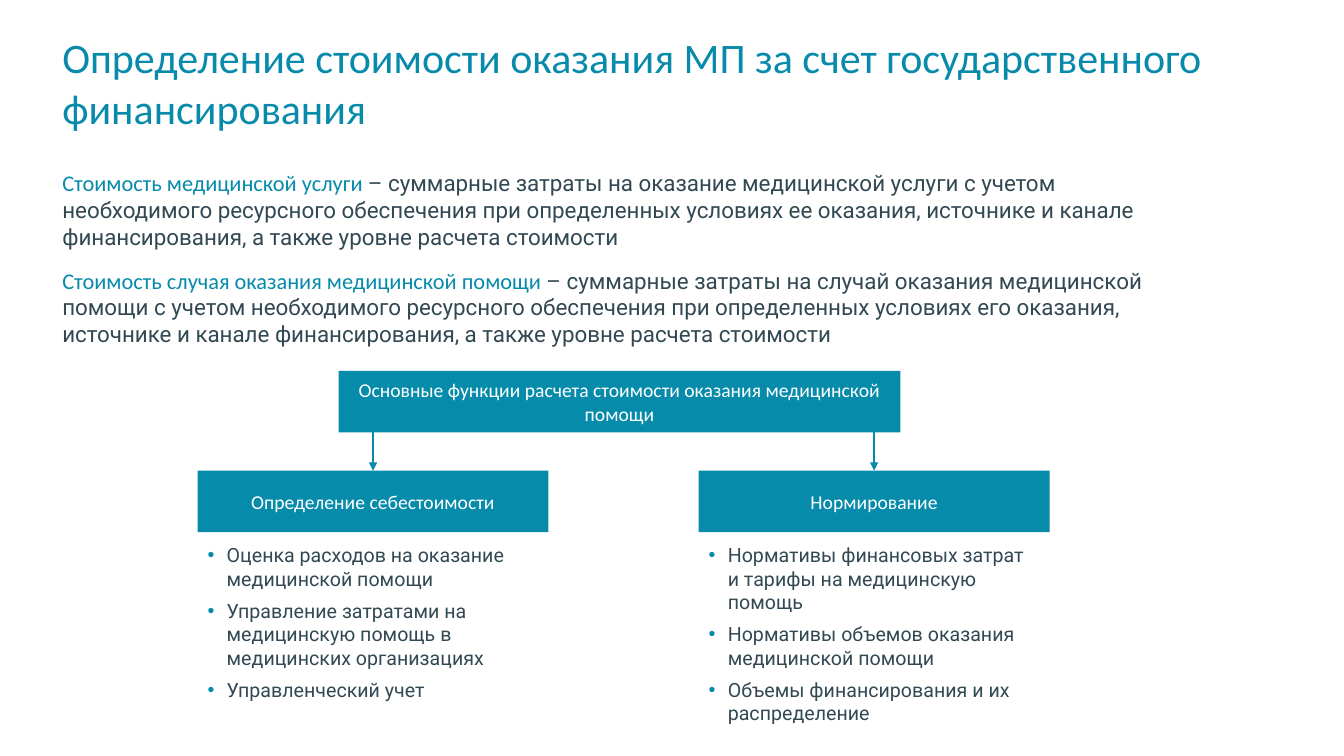
from lxml.etree import SubElement
from pptx import Presentation
from pptx.dml.color import RGBColor
from pptx.enum.shapes import MSO_CONNECTOR, MSO_SHAPE
from pptx.enum.text import MSO_ANCHOR, PP_ALIGN
from pptx.oxml.ns import qn
from pptx.util import Inches, Pt

TEAL, TITLE_TEAL, SLATE, WHITE = "068BAA", "088AAB", "324953", "FFFFFF"
LEFT, WIDTH = 0.52, 11.53
COLUMN_LEFT, COLUMN_STEP, COLUMN_WIDTH = 1.96, 4.97, 3.48
HEADER_TOP, HEADER_HEIGHT, LIST_TOP, LIST_HEIGHT = 4.67, 0.61, 5.34, 1.68
ARROW_LENGTH = 0.54

TITLE = "Определение стоимости оказания МП за счет государственного финансирования"
DEFINITIONS = [
    ("Стоимость медицинской услуги ",
     "– суммарные затраты на оказание медицинской услуги с учетом необходимого "
     "ресурсного обеспечения при определенных условиях ее оказания, источнике и канале "
     "финансирования, а также уровне расчета стоимости"),
    ("Стоимость случая оказания медицинской помощи ",
     "– суммарные затраты на случай оказания медицинской помощи с учетом необходимого "
     "ресурсного обеспечения при определенных условиях его оказания, источнике и канале "
     "финансирования, а также уровне расчета стоимости"),
]
FUNCTIONS_HEADING = "Основные функции расчета стоимости оказания медицинской помощи"
FUNCTIONS = [
    ("Определение себестоимости", [
        "Оценка расходов на оказание медицинской помощи",
        "Управление затратами на медицинскую помощь в медицинских организациях",
        "Управленческий учет"]),
    ("Нормирование", [
        "Нормативы финансовых затрат и тарифы на медицинскую помощь",
        "Нормативы объемов оказания медицинской помощи",
        "Объемы финансирования и их распределение"]),
]


def color(value):
    """Turn a hex string into a colour."""
    return RGBColor.from_string(value)


def apply_format(target, values):
    """Set each attribute in a dict of format values."""
    for name, value in values.items():
        setattr(target, name, value)


def add_span(para, text, size, font, shade):
    """Append one formatted run to a paragraph."""
    span = para.add_run()
    span.text = text
    apply_format(span.font, {"size": Pt(size), "name": font})
    span.font.color.rgb = color(shade)


def add_text_box(page, box, anchor=MSO_ANCHOR.TOP):
    """Add a wrapping text box and return its text frame."""
    frame = page.shapes.add_textbox(*map(Inches, box)).text_frame
    apply_format(frame, {"word_wrap": True, "vertical_anchor": anchor})
    return frame


def next_para(frame, index):
    """Return the first paragraph, or append a new one."""
    return frame.add_paragraph() if index else frame.paragraphs[0]


def add_title(page, box):
    """Place the slide title."""
    frame = add_text_box(page, box, MSO_ANCHOR.MIDDLE)
    add_span(frame.paragraphs[0], TITLE, 30, "Calibri", TITLE_TEAL)


def add_definitions(page, box):
    """Place the definitions, each with a highlighted term."""
    frame = add_text_box(page, box)
    for index, (term, meaning) in enumerate(DEFINITIONS):
        para = next_para(frame, index)
        apply_format(para, {"space_before": Pt(6 if index else 0), "space_after": Pt(6)})
        add_span(para, term, 16, "Calibri", TEAL)
        add_span(para, meaning, 16, "Roboto", SLATE)


def add_heading_block(page, box, text):
    """Place a filled rectangle with a centred heading."""
    block = page.shapes.add_shape(MSO_SHAPE.RECTANGLE, *map(Inches, box))
    block.shadow.inherit = False
    block.fill.solid()
    block.fill.fore_color.rgb = color(TEAL)
    block.line.fill.background()
    apply_format(block.text_frame, {"word_wrap": True, "vertical_anchor": MSO_ANCHOR.MIDDLE})
    para = block.text_frame.paragraphs[0]
    para.alignment = PP_ALIGN.CENTER
    add_span(para, text, 14, "Calibri", WHITE)


def add_bullets(page, box, items):
    """Place a bulleted list."""
    frame = add_text_box(page, box)
    for index, item in enumerate(items):
        para = next_para(frame, index)
        para.space_after = Pt(6)
        properties = para._p.get_or_add_pPr()
        properties.set("marL", str(Inches(0.19)))
        properties.set("indent", str(-Inches(0.19)))
        bullet_color = SubElement(properties, qn("a:buClr"))
        SubElement(bullet_color, qn("a:srgbClr")).set("val", TEAL)
        SubElement(properties, qn("a:buFont")).set("typeface", "Arial")
        SubElement(properties, qn("a:buChar")).set("char", "•")
        add_span(para, item, 14, "Roboto", SLATE)


def add_down_arrow(page, center, top, bottom):
    """Draw a vertical arrow pointing down."""
    arrow = page.shapes.add_connector(
        MSO_CONNECTOR.STRAIGHT, *map(Inches, (center, top, center, bottom)))
    arrow.line.color.rgb = color(TEAL)
    arrow.line.width = Pt(1)
    SubElement(arrow.line._get_or_add_ln(), qn("a:tailEnd")).set("type", "triangle")
    SubElement(arrow._element.spPr, qn("a:effectLst"))


def add_function_column(page, left, heading, items):
    """Place one function: arrow, heading and bullets."""
    add_down_arrow(page, left + COLUMN_WIDTH / 2, HEADER_TOP - ARROW_LENGTH, HEADER_TOP)
    add_heading_block(page, (left, HEADER_TOP, COLUMN_WIDTH, HEADER_HEIGHT), heading)
    add_bullets(page, (left, LIST_TOP, COLUMN_WIDTH, LIST_HEIGHT), items)


def main():
    """Build and save the slide."""
    deck = Presentation()
    apply_format(deck, {"slide_width": Inches(13.33), "slide_height": Inches(7.5)})
    page = deck.slides.add_slide(deck.slide_layouts[6])
    add_title(page, (LEFT, 0, WIDTH, 1.63))
    add_definitions(page, (LEFT, 1.63, WIDTH, 1.93))
    add_heading_block(page, (3.36, 3.68, 5.57, HEADER_HEIGHT), FUNCTIONS_HEADING)
    for index, (heading, items) in enumerate(FUNCTIONS):
        add_function_column(page, COLUMN_LEFT + index * COLUMN_STEP, heading, items)
    deck.save("out.pptx")


if __name__ == "__main__":
    main()
